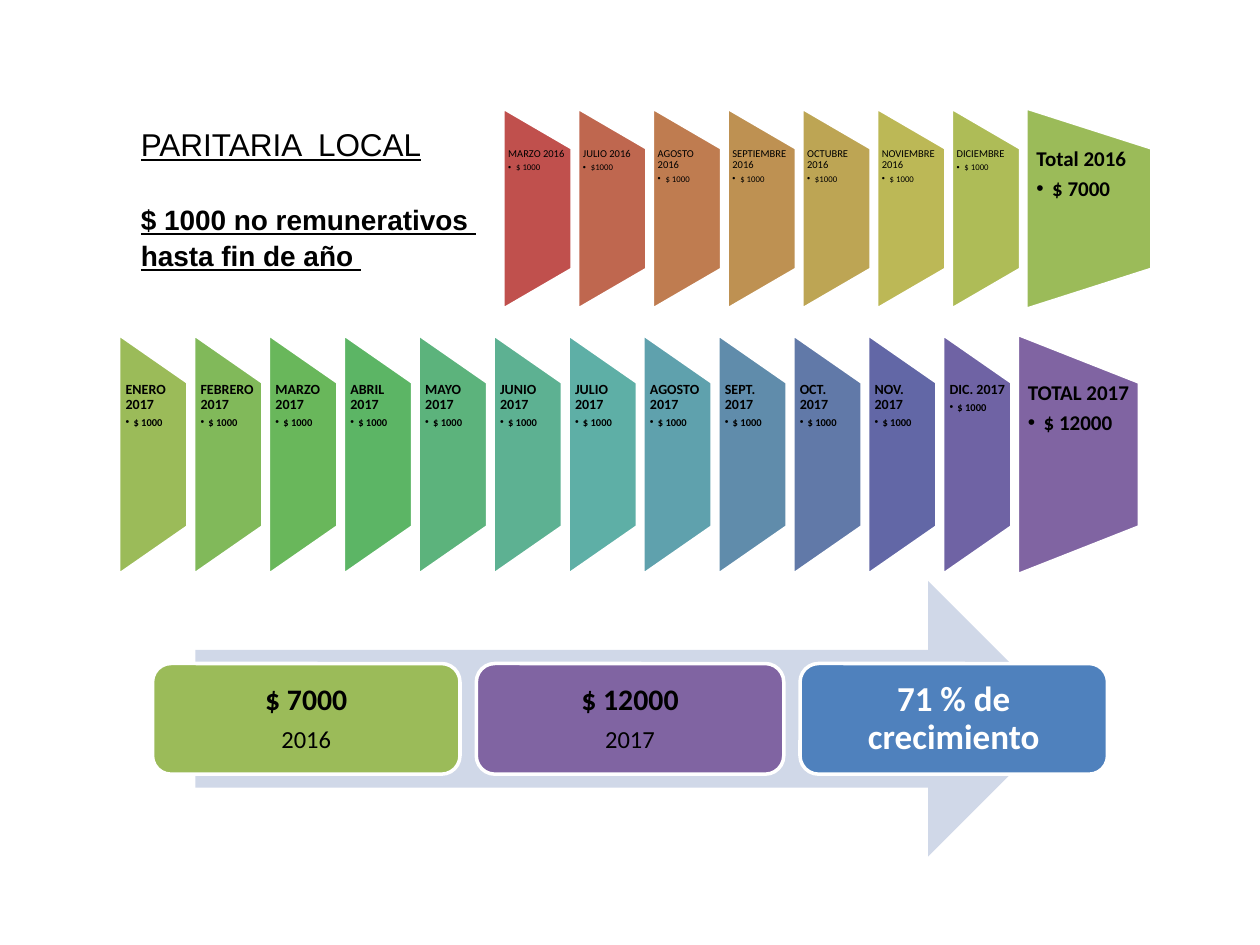
from lxml.etree import SubElement
from pptx import Presentation
from pptx.dml.color import RGBColor
from pptx.enum.shapes import MSO_SHAPE
from pptx.enum.text import MSO_ANCHOR, PP_ALIGN
from pptx.oxml.ns import qn
from pptx.util import Pt

MONTHS_2016 = [
    ("MARZO 2016", "$ 1000", "C0504D"),
    ("JULIO 2016", "$1000", "BF674F"),
    ("AGOSTO 2016", "$ 1000", "BF7C50"),
    ("SEPTIEMBRE 2016", "$ 1000", "BE9152"),
    ("OCTUBRE 2016", "$1000", "BDA554"),
    ("NOVIEMBRE 2016", "$ 1000", "BCB856"),
    ("DICIEMBRE", "$ 1000", "AEBC57"),
]
MONTHS_2017 = [
    (f"{month} 2017", "$ 1000", color)
    for month, color in [
        ("ENERO", "9BBB59"), ("FEBRERO", "81B95A"), ("MARZO", "69B75B"),
        ("ABRIL", "5CB565"), ("MAYO", "5CB37C"), ("JUNIO", "5DB192"),
        ("JULIO", "5EAFA6"), ("AGOSTO", "5FA1AD"), ("SEPT.", "608CAB"),
        ("OCT.", "6179A8"), ("NOV.", "6267A6"), ("DIC.", "6F63A4"),
    ]
]
TOTAL_2016 = ("Total 2016", "$ 7000", "9BBB59")
TOTAL_2017 = ("TOTAL 2017", "$ 12000", "8064A2")
CARDS = [
    ("9BBB59", "000000", [("$ 7000", 17, True), ("2016", 14, False)]),
    ("8064A2", "000000", [("$ 12000", 17, True), ("2017", 14, False)]),
    ("4F81BD", "FFFFFF", [("71 % de crecimiento", 20, True)]),
]
MONTH_WIDTH = 39.6


def rgb(color):
    return RGBColor.from_string(color)


def add_filled_shape(slide, kind, left, top, width, height, fill, line=None):
    shape = slide.shapes.add_shape(kind, Pt(left), Pt(top), Pt(width), Pt(height))
    shape.shadow.inherit = False
    shape.fill.solid()
    shape.fill.fore_color.rgb = rgb(fill)
    if line:
        shape.line.color.rgb = rgb(line)
        shape.line.width = Pt(2)
    else:
        shape.line.fill.background()
    return shape


def set_margins(frame, left, top, right, bottom):
    frame.margin_left, frame.margin_top = Pt(left), Pt(top)
    frame.margin_right, frame.margin_bottom = Pt(right), Pt(bottom)


def format_text(paragraph, size, bold=False, color="000000", font="Calibri", underline=None):
    for span in paragraph.runs:
        span.font.name = font
        span.font.size = Pt(size)
        span.font.bold = bold
        span.font.underline = underline
        span.font.color.rgb = rgb(color)


def set_spacing(paragraph, after):
    paragraph.line_spacing = 0.9
    paragraph.space_after = Pt(after)


def add_bullet(paragraph, indent):
    properties = paragraph._p.get_or_add_pPr()
    properties.set("marL", str(Pt(indent)))
    properties.set("indent", str(-Pt(indent)))
    SubElement(properties, qn("a:buFont")).set("typeface", "Arial")
    SubElement(properties, qn("a:buChar")).set("char", "•")


def add_panel(slide, entry, left, middle, width, height, sizes, bold, inset, indent):
    """Add a panel tapering to the right, with a heading and a bulleted amount."""
    heading, amount, color = entry
    # The preset tapers downwards, so its sides are swapped and it is turned.
    panel = add_filled_shape(
        slide, MSO_SHAPE.FLOWCHART_MANUAL_OPERATION,
        left + (width - height) / 2, middle - width / 2, height, width, color, "FFFFFF")
    panel.rotation = 270

    box = slide.shapes.add_textbox(
        Pt(left), Pt(middle - 0.3 * height), Pt(width), Pt(0.6 * height))
    frame = box.text_frame
    frame.word_wrap = True
    set_margins(frame, inset, 0, 3, 0)
    frame.text = f"{heading}\n{amount}"
    for para, size, share in zip(frame.paragraphs, sizes, (0.35, 0.15)):
        format_text(para, size, bold)
        set_spacing(para, size * share)
    frame.paragraphs[1].level = 1
    add_bullet(frame.paragraphs[1], indent)


def add_year(slide, months, total, left, pitch, middle, height, total_width,
             sizes, bold, inset):
    for index, entry in enumerate(months):
        add_panel(slide, entry, left + index * pitch, middle, MONTH_WIDTH, height,
                  sizes, bold, inset, 4.5)
    add_panel(slide, total, left + len(months) * pitch, middle, total_width, height,
              (12, 12), True, 6, 9)


def add_title(slide):
    box = slide.shapes.add_textbox(Pt(73.4), Pt(67.7), Pt(208.8), Pt(90))
    frame = box.text_frame
    frame.word_wrap = False
    frame.text = "PARITARIA  LOCAL\n$ 1000 no remunerativos \nhasta fin de año "
    styles = [(18, False, 0), (16, True, 23), (16, True, 1.3)]
    for para, (size, bold, before) in zip(frame.paragraphs, styles):
        format_text(para, size, bold, font="Arial", underline=True)
        para.space_before = Pt(before)


def add_card(slide, left, fill, color, lines):
    card = add_filled_shape(slide, MSO_SHAPE.ROUNDED_RECTANGLE,
                            left, 379.2, 175.7, 63.2, fill, "FFFFFF")
    frame = card.text_frame
    frame.word_wrap = True
    frame.vertical_anchor = MSO_ANCHOR.MIDDLE
    set_margins(frame, 8, 8, 8, 8)
    frame.text = "\n".join(text for text, _, _ in lines)
    for para, (_, size, bold) in zip(frame.paragraphs, lines):
        para.alignment = PP_ALIGN.CENTER
        format_text(para, size, bold, color)
        set_spacing(para, size * 0.35)


def main():
    deck = Presentation()
    deck.slide_width, deck.slide_height = Pt(720), Pt(540)
    slide = deck.slides.add_slide(deck.slide_layouts[6])

    add_year(slide, MONTHS_2016, TOTAL_2016, left=287.4, pitch=42.7, middle=119.2,
             height=115.2, total_width=72, sizes=(6, 5), bold=False, inset=3)
    add_year(slide, MONTHS_2017, TOTAL_2017, left=67.8, pitch=42.8, middle=259.7,
             height=137.5, total_width=69.8, sizes=(8, 6), bold=True, inset=4)
    add_title(slide)

    add_filled_shape(slide, MSO_SHAPE.RIGHT_ARROW, 111.6, 332, 497.5, 157.5, "D0D8E8")
    for index, (fill, color, lines) in enumerate(CARDS):
        add_card(slide, 87.2 + index * 185, fill, color, lines)

    deck.save("out.pptx")


if __name__ == "__main__":
    main()
